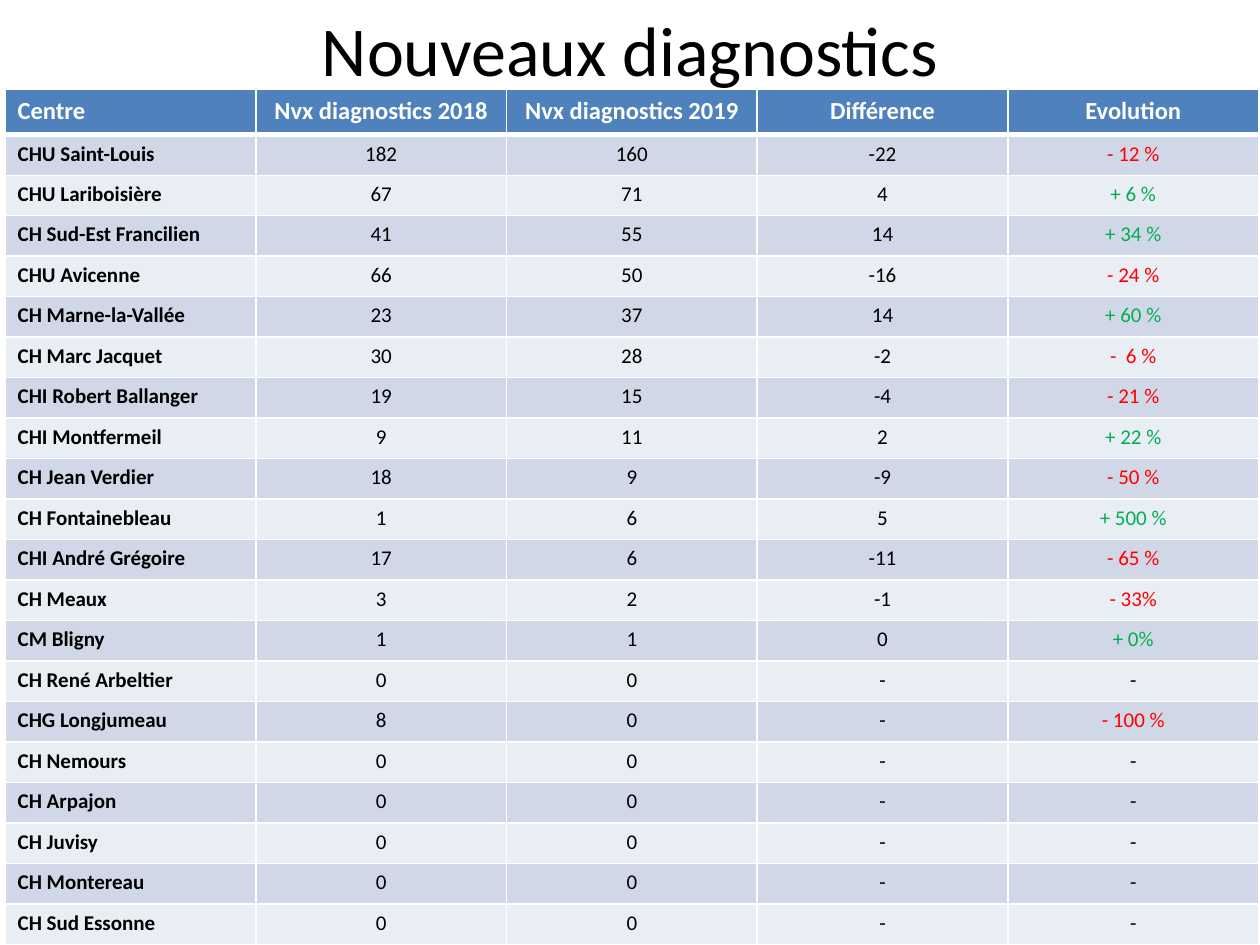
from typing import NamedTuple

import lxml.etree
import pptx
import pptx.dml.color
import pptx.enum.text
import pptx.oxml.ns
import pptx.util

RGB = pptx.dml.color.RGBColor
ALIGN = pptx.enum.text.PP_ALIGN
ANCHOR = pptx.enum.text.MSO_ANCHOR
qn = pptx.oxml.ns.qn
Inches = pptx.util.Inches

BLACK = RGB(0x00, 0x00, 0x00)
WHITE = RGB(0xFF, 0xFF, 0xFF)
BLUE = RGB(0x4F, 0x81, 0xBD)
BANDS = (RGB(0xD0, 0xD8, 0xE8), RGB(0xE9, 0xED, 0xF4))
RED = RGB(0xFF, 0x00, 0x00)
GREEN = RGB(0x00, 0xB0, 0x50)

WIDTH, HEIGHT = 10, 7.5
LEFT, TOP = 0.04, 0.71
COL = 1.99
HEAD = 0.36
FONT = "Calibri"


class Centre(NamedTuple):
    name: str
    old: str
    new: str
    diff: str
    trend: str


class Style(NamedTuple):
    size: int
    color: RGB
    bold: bool = False
    align: ALIGN = ALIGN.CENTER


LABELS = Centre("Centre", "Nvx diagnostics 2018", "Nvx diagnostics 2019",
                "Différence", "Evolution")
CENTRES = [
    Centre("CHU Saint-Louis", "182", "160", "-22", "- 12 %"),
    Centre("CHU Lariboisière", "67", "71", "4", "+ 6 %"),
    Centre("CH Sud-Est Francilien", "41", "55", "14", "+ 34 %"),
    Centre("CHU Avicenne", "66", "50", "-16", "- 24 %"),
    Centre("CH Marne-la-Vallée", "23", "37", "14", "+ 60 %"),
    Centre("CH Marc Jacquet", "30", "28", "-2", "-  6 %"),
    Centre("CHI Robert Ballanger", "19", "15", "-4", "- 21 %"),
    Centre("CHI Montfermeil", "9", "11", "2", "+ 22 %"),
    Centre("CH Jean Verdier", "18", "9", "-9", "- 50 %"),
    Centre("CH Fontainebleau", "1", "6", "5", "+ 500 %"),
    Centre("CHI André Grégoire", "17", "6", "-11", "- 65 %"),
    Centre("CH Meaux", "3", "2", "-1", "- 33%"),
    Centre("CM Bligny", "1", "1", "0", "+ 0%"),
    Centre("CH René Arbeltier", "0", "0", "-", "-"),
    Centre("CHG Longjumeau", "8", "0", "-", "- 100 %"),
    Centre("CH Nemours", "0", "0", "-", "-"),
    Centre("CH Arpajon", "0", "0", "-", "-"),
    Centre("CH Juvisy", "0", "0", "-", "-"),
    Centre("CH Montereau", "0", "0", "-", "-"),
    Centre("CH Sud Essonne", "0", "0", "-", "-"),
]


def set_text(frame, text: str, style: Style) -> None:
    frame.text = text
    para = frame.paragraphs[0]
    para.alignment = style.align
    para.font.name = FONT
    para.font.size = pptx.util.Pt(style.size)
    para.font.bold = style.bold
    para.font.color.rgb = style.color


def set_edges(cell, top: int, bottom: int) -> None:
    """Draw white borders; top and bottom are in points, the sides are 1 pt."""
    props = cell._tc.get_or_add_tcPr()
    for side, width in zip("LRTB", (1, 1, top, bottom)):
        line = lxml.etree.SubElement(props, qn(f"a:ln{side}"),
                                     w=str(pptx.util.Pt(width)))
        fill = lxml.etree.SubElement(line, qn("a:solidFill"))
        lxml.etree.SubElement(fill, qn("a:srgbClr"), val=str(WHITE))


def trend_color(trend: str) -> RGB:
    if trend == "-":
        return BLACK
    return GREEN if trend.startswith("+") else RED


def cell_style(row: int, col: int, text: str) -> Style:
    align = ALIGN.CENTER if col else ALIGN.LEFT
    if row == 0:
        return Style(14, WHITE, True, align)
    last = col == len(LABELS) - 1
    color = trend_color(text) if last else BLACK
    return Style(12, color, col == 0, align)


def add_title(slide, text: str) -> None:
    title = slide.shapes.title
    title.left, title.top = 0, 0
    title.width, title.height = Inches(WIDTH), Inches(0.77)
    title.text_frame.vertical_anchor = ANCHOR.TOP
    set_text(title.text_frame, text, Style(40, BLACK))


def add_grid(slide, rows: list[Centre]) -> None:
    table = slide.shapes.add_table(
        len(rows), len(LABELS), Inches(LEFT), Inches(TOP),
        Inches(COL * len(LABELS)), Inches(HEIGHT - TOP)).table
    for column in table.columns:
        column.width = Inches(COL)
    step = (HEIGHT - TOP - HEAD) / (len(rows) - 1)
    for r, record in enumerate(rows):
        table.rows[r].height = Inches(step if r else HEAD)
        for c, text in enumerate(record):
            cell = table.cell(r, c)
            set_edges(cell, 3 if r == 1 else 1, 1 if r else 3)
            cell.fill.solid()
            cell.fill.fore_color.rgb = BANDS[(r - 1) % 2] if r else BLUE
            set_text(cell.text_frame, text, cell_style(r, c, text))


def main() -> None:
    deck = pptx.Presentation()
    deck.slide_width, deck.slide_height = Inches(WIDTH), Inches(HEIGHT)
    slide = deck.slides.add_slide(deck.slide_layouts.get_by_name("Title Only"))
    add_title(slide, "Nouveaux diagnostics")
    add_grid(slide, [LABELS, *CENTRES])
    deck.save("out.pptx")


if __name__ == "__main__":
    main()
